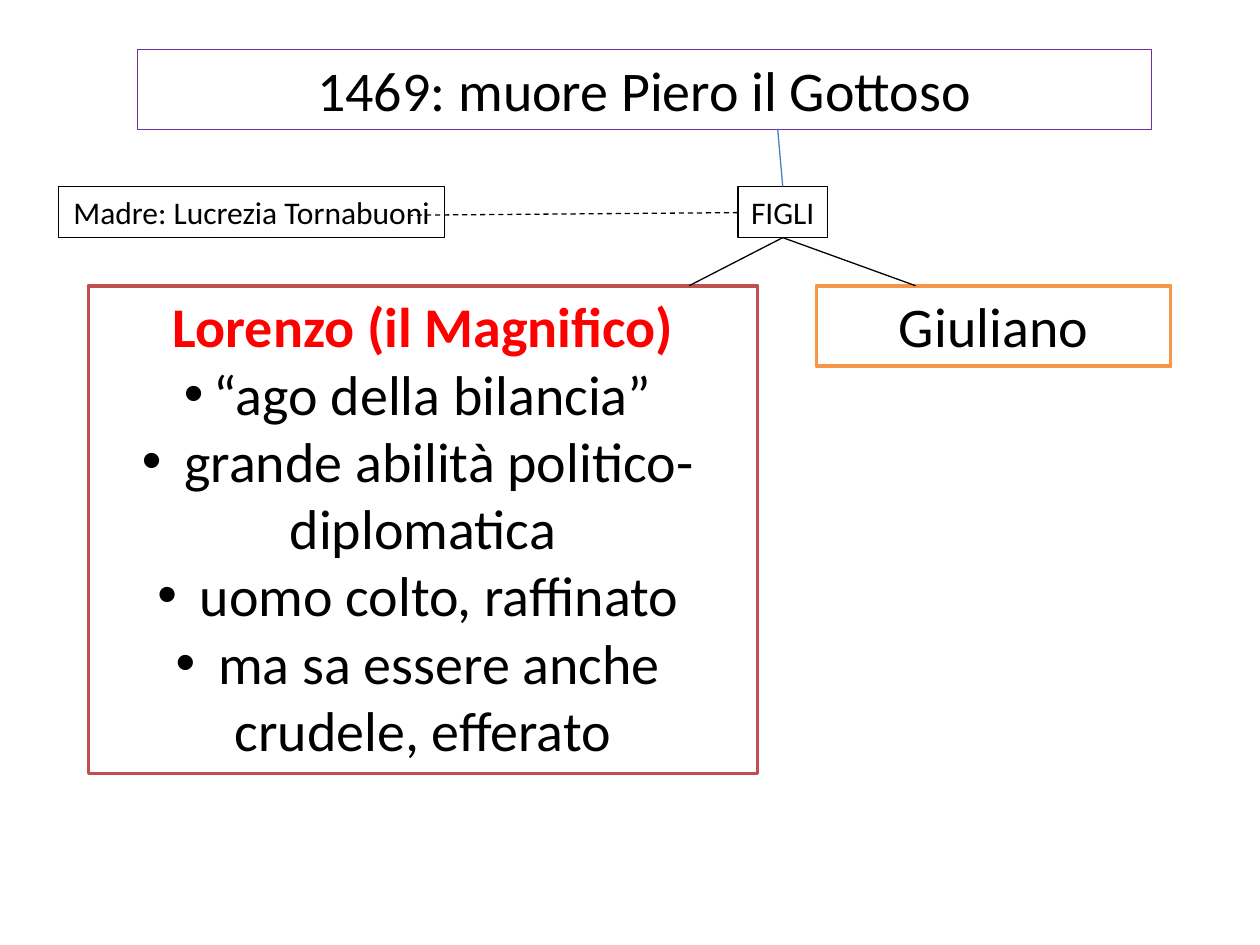
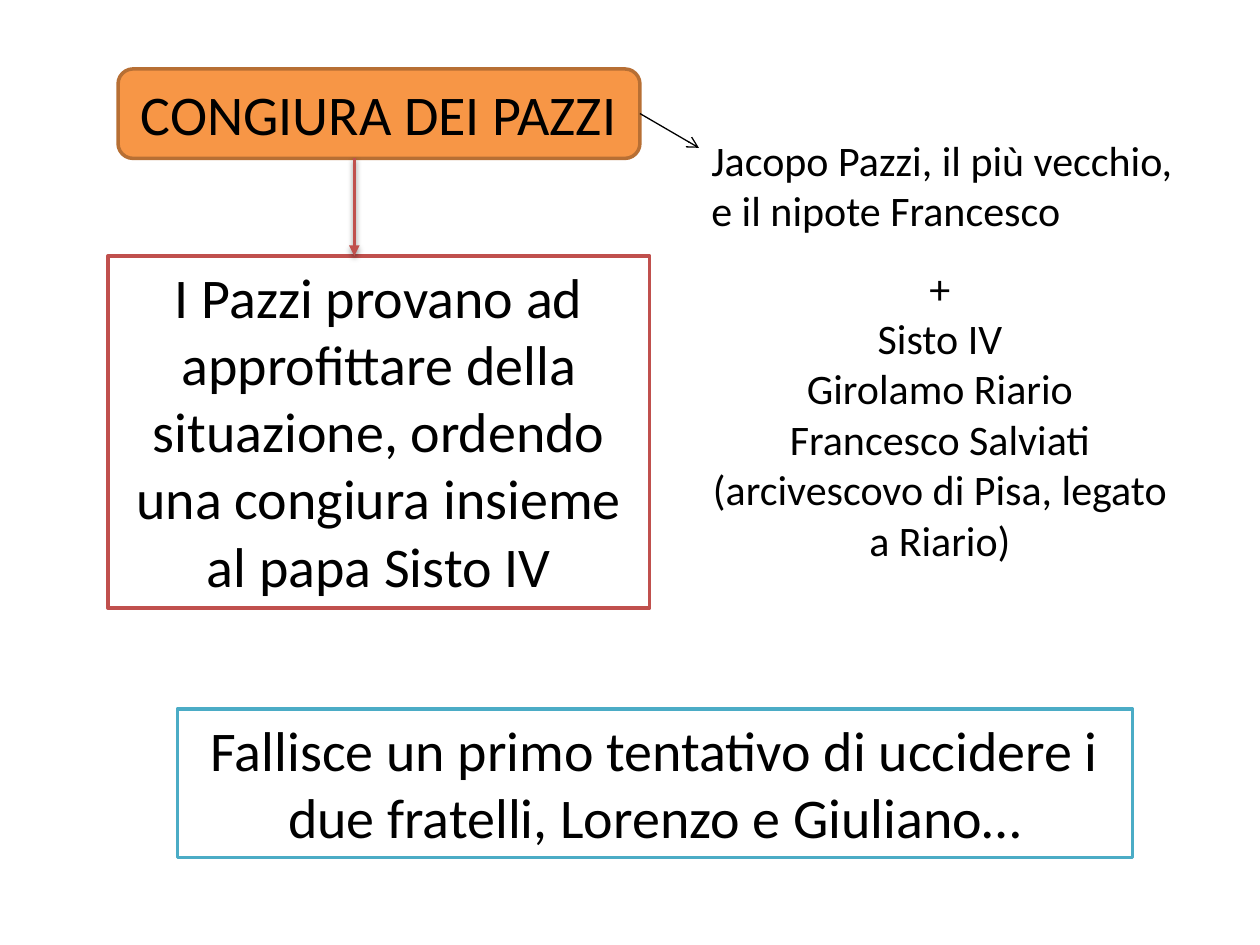
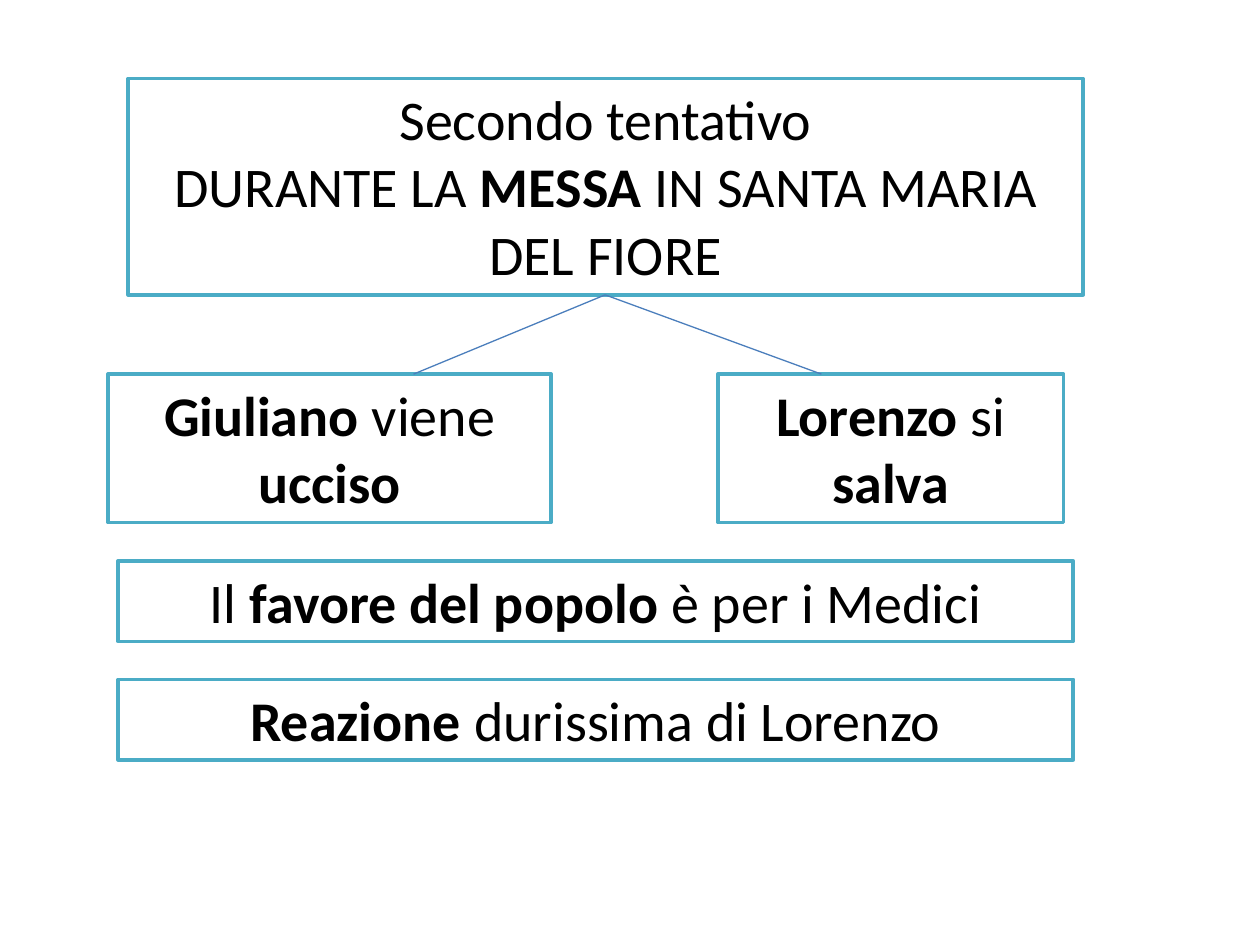
from lxml.etree import SubElement
from pptx import Presentation
from pptx.dml.color import RGBColor
from pptx.enum.dml import MSO_LINE
from pptx.enum.shapes import MSO_CONNECTOR, MSO_SHAPE
from pptx.enum.text import MSO_ANCHOR, MSO_AUTO_SIZE, PP_ALIGN
from pptx.oxml.ns import qn
from pptx.util import Pt

BLACK = RGBColor(0x00, 0x00, 0x00)
WHITE = RGBColor(0xFF, 0xFF, 0xFF)
RED = RGBColor(0xFF, 0x00, 0x00)
BRICK = RGBColor(0xC0, 0x50, 0x4D)
ORANGE = RGBColor(0xF7, 0x96, 0x46)
BROWN = RGBColor(0xB7, 0x6F, 0x34)
TEAL = RGBColor(0x4B, 0xAC, 0xC6)
BLUE = RGBColor(0x4B, 0x7E, 0xBC)
PURPLE = RGBColor(0x70, 0x30, 0xA0)

FONT = "Calibri"
LARGE, MEDIUM, SMALL = 32, 24, 18
THIN, THICK = 0.75, 2


def write(frame, text, size=LARGE, color=BLACK, align=PP_ALIGN.CENTER, bullet=False):
    """Add one paragraph per line; **marked** words are bold."""
    for line in text.split("\n"):
        first = frame.paragraphs[0]
        paragraph = frame.add_paragraph() if first.runs else first
        paragraph.alignment = align
        if bullet:
            properties = paragraph._p.get_or_add_pPr()
            SubElement(properties, qn("a:buFont"), typeface="Arial")
            SubElement(properties, qn("a:buChar"), char="•")
        for index, words in enumerate(line.split("**")):
            if words:
                run = paragraph.add_run()
                run.text = words
                run.font.name = FONT
                run.font.size = Pt(size)
                run.font.bold = index % 2 == 1
                run.font.color.rgb = color


class ConceptMap:
    """Shared style of the boxes and links, and the slide being drawn."""

    def __init__(self):
        self.deck = Presentation()
        self.deck.slide_width, self.deck.slide_height = Pt(720), Pt(540)
        self.slide = None

    def new_slide(self):
        self.slide = self.deck.slides.add_slide(self.deck.slide_layouts[6])

    def fit(self, frame, wrap=True):
        frame.word_wrap = wrap
        frame.auto_size = MSO_AUTO_SIZE.SHAPE_TO_FIT_TEXT
        frame.vertical_anchor = MSO_ANCHOR.TOP
        return frame

    def box(self, place, text, outline, width=THICK, fill=WHITE,
            shape=MSO_SHAPE.RECTANGLE, wrap=True, **text_format):
        box = self.slide.shapes.add_shape(shape, *map(Pt, place))
        box.shadow.inherit = False
        if fill is None:
            box.fill.background()
        else:
            box.fill.solid()
            box.fill.fore_color.rgb = fill
        box.line.color.rgb = outline
        box.line.width = Pt(width)
        frame = self.fit(box.text_frame, wrap)
        write(frame, text, **text_format)
        return frame

    def label(self, place, text, **text_format):
        box = self.slide.shapes.add_textbox(*map(Pt, place))
        write(self.fit(box.text_frame), text, size=MEDIUM, **text_format)

    def link(self, start, end, color=BLACK, width=THIN, dashed=False,
             head=None, shadow=False):
        link = self.slide.shapes.add_connector(
            MSO_CONNECTOR.STRAIGHT, *map(Pt, (*start, *end)))
        link.line.color.rgb = color
        link.line.width = Pt(width)
        if dashed:
            link.line.dash_style = MSO_LINE.DASH
        if head:
            SubElement(link.line._get_or_add_ln(), qn("a:tailEnd"), type=head)
        effects = SubElement(link._element.spPr, qn("a:effectLst"))
        if shadow:
            outer = SubElement(effects, qn("a:outerShdw"), blurRad=str(Pt(3.1)),
                               dist=str(Pt(1.6)), dir="5400000", rotWithShape="0")
            black = SubElement(outer, qn("a:srgbClr"), val=str(BLACK))
            SubElement(black, qn("a:alpha"), val="38000")


def family(page):
    page.new_slide()
    page.box((78.5, 28.1, 579.5, 46), "1469: muore Piero il Gottoso",
             PURPLE, THIN, fill=None)

    # The two sons
    lorenzo = page.box((50.5, 163.3, 382.5, 278.8), "**Lorenzo (il Magnifico)**",
                       BRICK, color=RED)
    write(lorenzo, "“ago della bilancia”\n grande abilità politico-diplomatica\n"
          " uomo colto, raffinato\n ma sa essere anche crudele, efferato", bullet=True)
    page.box((466.6, 163.3, 202.4, 46), "Giuliano", ORANGE)

    # Children and mother
    for left, width, text in ((421.8, 51, "FIGLI"),
                              (33.4, 220.8, "Madre: Lucrezia Tornabuoni")):
        page.box((left, 106.6, width, 29.1), text, BLACK, THIN, fill=None,
                 wrap=False, size=SMALL)

    # Family links
    page.link((444.4, 73.6), (447.3, 106.6), BLUE)
    for son_x in (393.8, 523.2):
        page.link((447.3, 135.8), (son_x, 163.3))
    page.link((421.8, 121.5), (230.4, 123), dashed=True)


def conspiracy(page):
    page.new_slide()
    page.box((61.8, 146.3, 309.5, 201.2),
             "I Pazzi provano ad approfittare della situazione, ordendo una "
             "congiura insieme al papa Sisto IV", BRICK)
    page.box((67.5, 39.4, 298.2, 51.1), "CONGIURA DEI PAZZI", BROWN, fill=ORANGE,
             shape=MSO_SHAPE.ROUNDED_RECTANGLE)
    page.link((202.5, 90.3), (202.5, 146.3), BRICK, THICK, head="triangle", shadow=True)

    # Conspirators
    page.label((399.4, 73.2, 286.6, 65.4),
               "Jacopo Pazzi, il più vecchio, e il nipote Francesco", align=PP_ALIGN.LEFT)
    page.link((365.7, 64.9), (399.4, 84.5), head="arrow")
    page.label((393.8, 146.3, 286.6, 181.7),
               "+\nSisto IV\nGirolamo Riario\n"
               "Francesco Salviati (arcivescovo di Pisa, legato a Riario)")

    page.box((101.3, 405.2, 545.8, 84.8),
             "Fallisce un primo tentativo di uccidere i due fratelli, "
             "Lorenzo e Giuliano…", TEAL)


def second_attempt(page):
    page.new_slide()
    page.box((73.2, 44.9, 545.8, 123.6),
             "Secondo tentativo\nDURANTE LA **MESSA** IN SANTA MARIA DEL FIORE", TEAL)

    # Fate of the brothers
    for left, width, text in ((61.8, 253.2, "**Giuliano** viene **ucciso**"),
                              (410.3, 197.5, "**Lorenzo** si **salva**")):
        page.box((left, 213.8, width, 84.8), text, TEAL)

    # Consequences
    for top, text in ((320.5, "Il **favore del popolo **è per i Medici"),
                      (388.2, "**Reazione** durissima di Lorenzo")):
        page.box((67.5, top, 545.8, 46), text, TEAL)

    for brother_x in (236.3, 469.4):
        page.link((345.8, 168.5), (brother_x, 213.8), BLUE)


def main():
    page = ConceptMap()
    family(page)
    conspiracy(page)
    second_attempt(page)
    page.deck.save("out.pptx")


if __name__ == "__main__":
    main()
